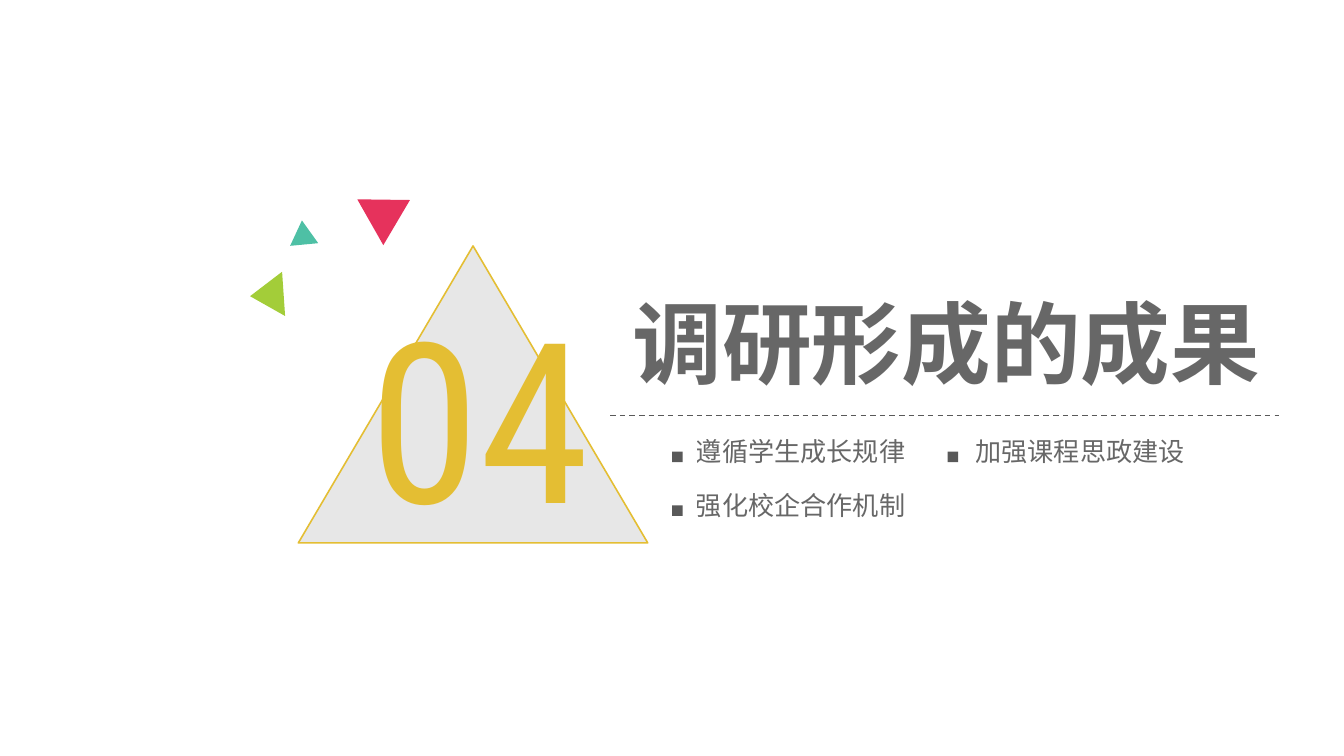
from dataclasses import dataclass
from lxml.etree import SubElement
from pptx import Presentation
from pptx.dml.color import RGBColor as RGB
from pptx.enum.dml import MSO_LINE as Dash
from pptx.enum.shapes import MSO_CONNECTOR as Conn, MSO_SHAPE as Kind
from pptx.enum.text import MSO_AUTO_SIZE as Fit
from pptx.oxml.ns import qn
from pptx.util import Inches, Pt


@dataclass(frozen=True)
class Theme:
    gray: str = "595959"
    gold: str = "E4BE33"
    red: str = "E6325C"
    teal: str = "4EC0A5"
    green: str = "A3CD39"
    sans: str = "Noto Sans CJK SC"
    digit: str = "Roboto Condensed"
    huge: int = 120
    title: int = 48
    item: int = 14
    tint: int = 14   # opacity of the large triangle, percent
    ink: int = 91    # opacity of the wording, percent


T = Theme()


def fade(node, pct):
    """Set the opacity of the solid fill under node."""
    tone = node.find(qn("a:solidFill"))[0]
    SubElement(tone, qn("a:alpha"), val=str(pct * 1000))


def add_form(shapes, kind, box, color, turn=0, edge=None, pct=100):
    form = shapes.add_shape(kind, *map(Inches, box))
    form.shadow.inherit = False
    form.rotation = turn
    form.fill.solid()
    form.fill.fore_color.rgb = RGB.from_string(color)
    if pct < 100:
        fade(form._element.spPr, pct)
    if edge:
        form.line.color.rgb = RGB.from_string(edge)
        form.line.width = Pt(0.85)
    else:
        form.line.fill.background()


def add_text(shapes, box, words, size, color, face, bold=False, pct=100):
    frame = shapes.add_textbox(*map(Inches, box)).text_frame
    frame.word_wrap = False
    frame.auto_size = Fit.SHAPE_TO_FIT_TEXT
    run = frame.paragraphs[0].add_run()
    run.text = words
    font = run.font
    font.size, font.bold, font.name = Pt(size), bold, face
    font.color.rgb = RGB.from_string(color)
    props = run._r.get_or_add_rPr()
    SubElement(props, qn("a:ea"), typeface=face)
    if pct < 100:
        fade(props, pct)


def add_rule(shapes, left, right, y):
    rule = shapes.add_connector(
        Conn.STRAIGHT, Inches(left), Inches(y), Inches(right), Inches(y))
    rule.line.color.rgb = RGB.from_string(T.gray)
    rule.line.width = Pt(0.75)
    rule.line.dash_style = Dash.DASH
    SubElement(rule._element.spPr, qn("a:effectLst"))


def add_item(shapes, left, top, gap, words):
    """Group a square marker with its topic."""
    group = shapes.add_group_shape().shapes
    add_form(group, Kind.RECTANGLE, (left, top + 0.17, 0.08, 0.08), T.gray)
    add_text(group, (left + gap, top, 1.77, 0.34), words,
             T.item, T.gray, T.sans, pct=T.ink)


def main():
    deck = Presentation()
    deck.slide_width = Inches(10)
    deck.slide_height = deck.slide_width * 9 // 16
    shapes = deck.slides.add_slide(deck.slide_layouts[6]).shapes
    tri = Kind.ISOSCELES_TRIANGLE

    # Section number on the large triangle
    add_form(shapes, tri, (2.22, 1.83, 2.6, 2.21), T.gray,
             edge=T.gold, pct=T.tint)
    add_text(shapes, (2.65, 2.03, 1.95, 2.12), "04", T.huge, T.gold, T.digit)

    # Title and dashed rule
    add_text(shapes, (4.61, 2.09, 4.91, 0.91), "调研形成的成果",
             T.title, T.gray, T.sans, bold=True, pct=T.ink)
    add_rule(shapes, 4.54, 9.52, 3.09)

    # Topics
    for left, top, gap, words in (
        (5, 3.19, 0.08, "遵循学生成长规律"),
        (7.05, 3.19, 0.11, "加强课程思政建设"),
        (5, 3.59, 0.08, "强化校企合作机制"),
    ):
        add_item(shapes, left, top, gap, words)

    # Small loose triangles
    for box, turn, color in (
        ((2.61, 1.4, 0.39, 0.34), 300.6, T.red),
        ((2.15, 1.64, 0.21, 0.18), 354.7, T.teal),
        ((1.82, 2.07, 0.33, 0.25), 266.1, T.green),
    ):
        add_form(shapes, tri, box, color, turn)

    deck.save("out.pptx")


if __name__ == "__main__":
    main()
